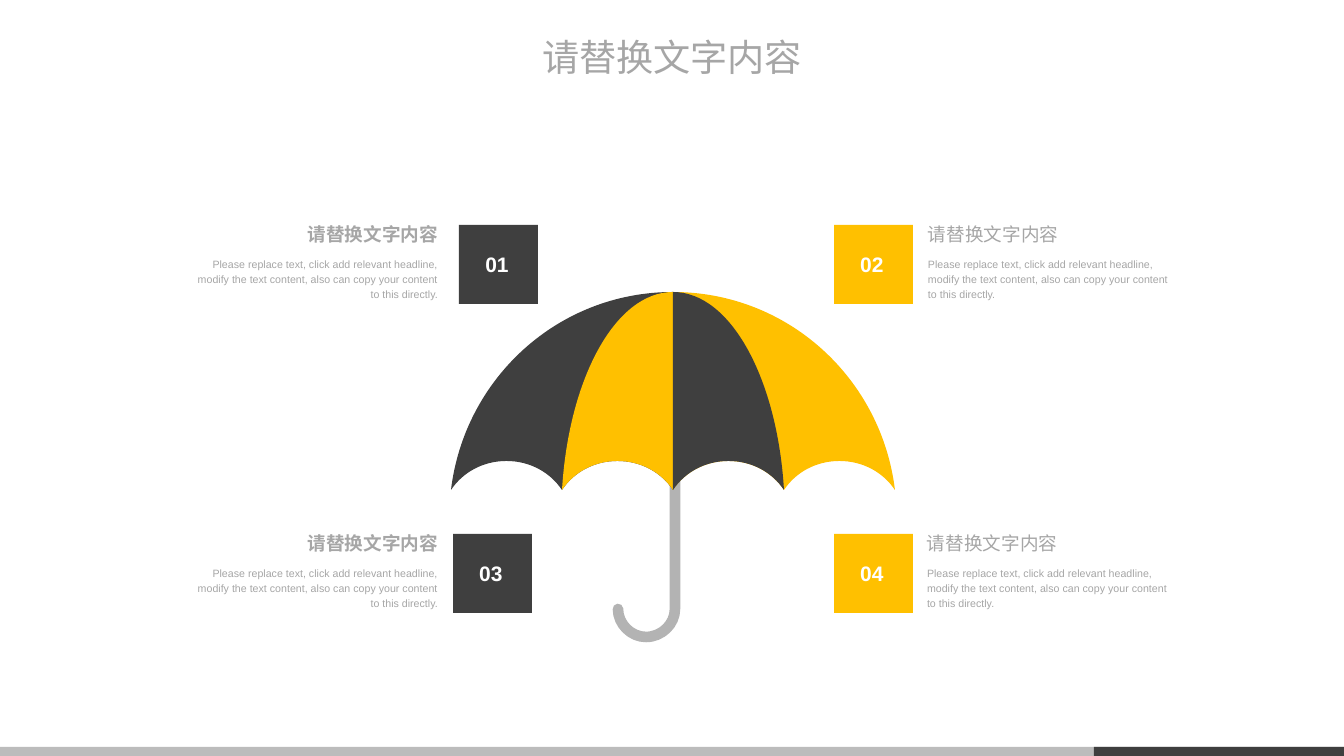
from lxml import etree
from pptx import Presentation
from pptx.dml.color import RGBColor
from pptx.enum.shapes import MSO_SHAPE as Shape
from pptx.enum.text import MSO_ANCHOR as Anchor, PP_ALIGN as Align
from pptx.oxml.ns import qn
from pptx.util import Pt

EMU_PER_PX = 9565
COLORS = {
    "dark": "3F3F3F",
    "yellow": "FFC000",
    "handle": "B3B3B3",
    "bar": "BCBCBC",
    "text": "A6A6A6",
    "white": "FFFFFF",
}
HEADLINE = "请替换文字内容"
BODY = ("Please replace text, click add relevant headline, modify the text "
        "content, also can copy your content to this directly.")

# Umbrella geometry
APEX_X, APEX_Y = 673, 292
HEM_Y, SCALLOP_TOP = 490, 461
RIB_GAP = 111
RIBS = [APEX_X + RIB_GAP * step for step in range(-2, 3)]
PANELS = [(2, 4, "yellow"), (0, 2, "dark"), (1, 2, "yellow"), (2, 3, "dark")]

# Number, square left, text edge, row top, square colour
ITEMS = [
    ("01", 459, 438, 207, "dark"),
    ("02", 834, 928, 207, "yellow"),
    ("03", 453, 438, 516, "dark"),
    ("04", 834, 927, 516, "yellow"),
]


def px(value):
    return round(value * EMU_PER_PX)


def color(name):
    return RGBColor.from_string(COLORS[name])


def paint(shape, fill):
    shape.shadow.inherit = False
    shape.fill.solid()
    shape.fill.fore_color.rgb = color(fill)
    shape.line.fill.background()


def add_block(slide, box, fill):
    shape = slide.shapes.add_shape(Shape.RECTANGLE, *map(px, box))
    paint(shape, fill)


def add_text(slide, box, text, size, align, ink="text", bold=False, spacing=1.2,
             anchor=Anchor.TOP, inset=0):
    frame = slide.shapes.add_textbox(*map(px, box)).text_frame
    frame_format = {
        "word_wrap": True, "vertical_anchor": anchor, "margin_left": 0,
        "margin_right": 0, "margin_top": px(inset), "margin_bottom": px(inset),
    }
    paragraph = frame.paragraphs[0]
    run = paragraph.add_run()
    run.text = text
    run.font.color.rgb = color(ink)
    formats = [
        (frame, frame_format),
        (paragraph, {"alignment": align, "line_spacing": spacing}),
        (run.font, {"name": "Arial", "size": Pt(size), "bold": bold}),
    ]
    for target, values in formats:
        for name, value in values.items():
            setattr(target, name, value)


def add_outline(slide, points, close):
    """Curved outline: each three points after the start make one Bezier curve,
    and a point left over at the end makes a straight line."""
    points = [(px(x), px(y)) for x, y in points]
    builder = slide.shapes.build_freeform(*points[0], scale=1.0)
    builder.add_line_segments(points[1:], close=close)
    shape = builder.convert_to_shape()
    lines = list(shape.element.iter(qn("a:lnTo")))
    for first in range(0, len(lines) - 2, 3):
        bezier = etree.Element(qn("a:cubicBezTo"))
        lines[first].addprevious(bezier)
        for line in lines[first:first + 3]:
            bezier.append(line[0])
            line.getparent().remove(line)
    return shape


def rib_edge(tip):
    """Edge of a panel, from its tip on the hem up to the apex."""
    reach = APEX_X - tip
    return [(tip, HEM_Y), (tip + reach * 0.06, 379),
            (tip + reach * 0.48, APEX_Y), (APEX_X, APEX_Y)]


def scallop(left):
    """One arch of the hem, after its left end."""
    middle, right = left + RIB_GAP / 2, left + RIB_GAP
    return [(left + 12, 472), (middle - 23, SCALLOP_TOP), (middle, SCALLOP_TOP),
            (middle + 23, SCALLOP_TOP), (right - 12, 472), (right, HEM_Y)]


def add_handle(slide):
    points = [(618, 609), (618, 624), (631, 637), (646, 637),
              (662, 637), (675, 624), (675, 609), (675, 381)]
    handle = add_outline(slide, points, close=False)
    handle.shadow.inherit = False
    handle.fill.background()
    handle.line.color.rgb = color("handle")
    handle.line.width = Pt(8)
    handle.element.spPr.find(qn("a:ln")).set("cap", "rnd")


def add_panel(slide, first, last, fill):
    hem = [point for left in RIBS[first:last] for point in scallop(left)]
    left_edge, right_edge = rib_edge(RIBS[first]), rib_edge(RIBS[last])
    points = left_edge[:1] + hem + right_edge[1:] + left_edge[-2::-1]
    paint(add_outline(slide, points, close=True), fill)


def add_item(slide, number, square_left, text_edge, top, fill):
    on_left = text_edge < square_left
    align = Align.RIGHT if on_left else Align.LEFT
    heading_width, body_width = (143, 249) if on_left else (168, 251)
    heading_left = text_edge - heading_width if on_left else text_edge
    body_left = text_edge - body_width if on_left else text_edge

    add_text(slide, (heading_left, top, heading_width, 37), HEADLINE, 14, align,
             bold=on_left, inset=11)
    add_text(slide, (body_left, top + 48, body_width, 65), BODY, 8, align)
    add_block(slide, (square_left, top + 18, 79, 79), fill)
    add_text(slide, (square_left + 6, top + 28, 64, 53), number, 15.8,
             Align.CENTER, ink="white", bold=True, anchor=Anchor.MIDDLE, inset=11)


def main():
    presentation = Presentation()
    presentation.slide_width = px(1344)
    presentation.slide_height = px(756)
    slide = presentation.slides.add_slide(presentation.slide_layouts[6])

    # Footer bar
    add_block(slide, (0, 747, 1344, 9), "bar")
    add_block(slide, (1094, 747, 250, 9), "dark")

    # Umbrella
    add_handle(slide)
    for panel in PANELS:
        add_panel(slide, *panel)

    # Numbered items
    for item in ITEMS:
        add_item(slide, *item)

    # Title
    add_text(slide, (523, 21, 298, 53), HEADLINE, 28, Align.CENTER, spacing=1.3)

    presentation.save("out.pptx")


if __name__ == "__main__":
    main()
